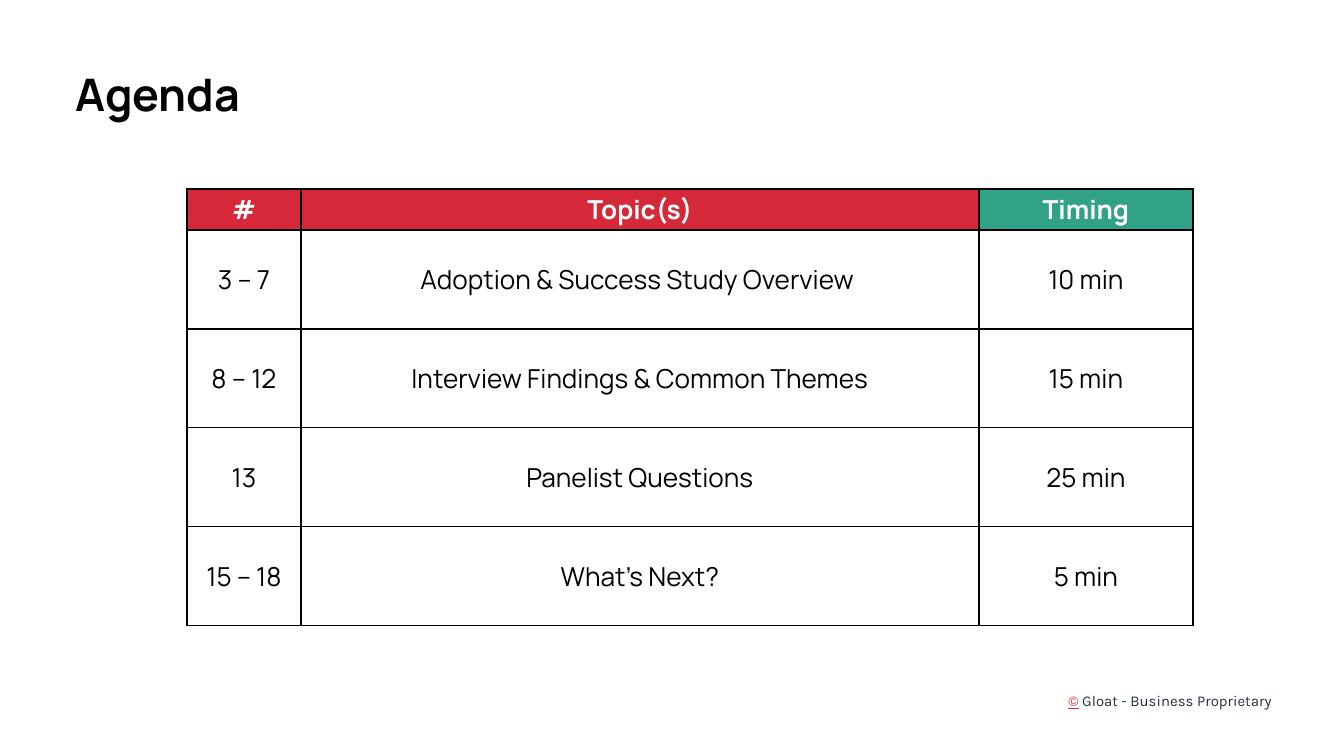
from lxml import etree
from pptx import Presentation
from pptx.dml.color import RGBColor
from pptx.enum.text import MSO_ANCHOR, MSO_AUTO_SIZE, PP_ALIGN
from pptx.oxml.ns import qn
from pptx.util import Emu, Pt

LEFT, CENTER, RIGHT = PP_ALIGN.LEFT, PP_ALIGN.CENTER, PP_ALIGN.RIGHT
MIDDLE = MSO_ANCHOR.MIDDLE
NO_AUTOFIT = MSO_AUTO_SIZE.NONE
TITLE_ONLY = 5
EMU_PER_PX = 914400 / 134.4
BLACK, WHITE, RED, GREEN, SLATE = "000000", "FFFFFF", "D52839", "32A287", "22333B"
HEADER_FILLS = [RED, RED, GREEN]
COLUMN_WIDTHS = [114, 678, 214]
HEADER_HEIGHT, ROW_HEIGHT = 41, 99
AGENDA = [
    ["#", "Topic(s)", "Timing"],
    ["3 – 7", "Adoption & Success Study Overview ", "10 min"],
    ["8 – 12", "Interview Findings & Common Themes", "15 min"],
    ["13", "Panelist Questions", "25 min"],
    ["15 – 18", "What’s Next?", "5 min"],
]


def px(value):
    return Emu(round(value * EMU_PER_PX))


def color(value):
    return RGBColor.from_string(value)


def add_run(paragraph, text, size, font_name, font_color, bold=False, underline=False):
    run = paragraph.add_run()
    run.text = text
    font = run.font
    font.size = Pt(size)
    font.name = font_name
    font.color.rgb = color(font_color)
    font.bold = bold
    font.underline = underline


def set_insets(frame, horizontal, vertical):
    frame.margin_left = frame.margin_right = px(horizontal)
    frame.margin_top = frame.margin_bottom = px(vertical)


def add_title(slide, text):
    title = slide.shapes.title
    title.left, title.top, title.width, title.height = px(62), px(35), px(1218), px(118)
    title.fill.solid()
    title.fill.fore_color.rgb = color(WHITE)
    frame = title.text_frame
    frame.auto_size = NO_AUTOFIT
    frame.vertical_anchor = MIDDLE
    set_insets(frame, 13, 13)
    paragraph = frame.paragraphs[0]
    paragraph.alignment = LEFT
    add_run(paragraph, text, 24, "Manrope", BLACK, bold=True)


def add_footer(slide):
    box = slide.shapes.add_textbox(px(1039), px(683), px(246), px(46))
    frame = box.text_frame
    frame.word_wrap = True
    set_insets(frame, 13, 13)
    paragraph = frame.paragraphs[0]
    paragraph.alignment = RIGHT
    add_run(paragraph, "©", 8, "Karla", RED, underline=True)
    add_run(paragraph, " Gloat - Business Proprietary", 8, "Karla", SLATE)


def set_borders(cell):
    properties = cell._tc.get_or_add_tcPr()
    for index, side in enumerate(["lnL", "lnR", "lnT", "lnB"]):
        line = etree.Element(qn(f"a:{side}"), w=str(Pt(0.75)))
        fill = etree.SubElement(line, qn("a:solidFill"))
        etree.SubElement(fill, qn("a:srgbClr"), val=BLACK)
        properties.insert(index, line)


def format_cell(cell, text, fill_color=None):
    if fill_color:
        cell.fill.solid()
        cell.fill.fore_color.rgb = color(fill_color)
    else:
        cell.fill.background()
    set_borders(cell)
    set_insets(cell, 13, 0)
    cell.vertical_anchor = MIDDLE
    paragraph = cell.text_frame.paragraphs[0]
    paragraph.alignment = CENTER
    is_header = fill_color is not None
    add_run(paragraph, text, 14, "Manrope", WHITE if is_header else BLACK, bold=is_header)


def add_agenda_table(slide):
    row_heights = [HEADER_HEIGHT] + [ROW_HEIGHT] * (len(AGENDA) - 1)
    table = slide.shapes.add_table(
        len(AGENDA), len(COLUMN_WIDTHS), px(187), px(189),
        px(sum(COLUMN_WIDTHS)), px(sum(row_heights)),
    ).table
    table.first_row = False
    table.horz_banding = False
    for column, width in zip(table.columns, COLUMN_WIDTHS):
        column.width = px(width)
    for row_index, (row, height) in enumerate(zip(table.rows, row_heights)):
        row.height = px(height)
        for column_index, text in enumerate(AGENDA[row_index]):
            fill_color = HEADER_FILLS[column_index] if row_index == 0 else None
            format_cell(table.cell(row_index, column_index), text, fill_color)


def main():
    presentation = Presentation()
    presentation.slide_width, presentation.slide_height = px(1344), px(756)
    slide = presentation.slides.add_slide(presentation.slide_layouts[TITLE_ONLY])
    add_title(slide, "Agenda")
    add_footer(slide)
    add_agenda_table(slide)
    presentation.save("out.pptx")


if __name__ == "__main__":
    main()
